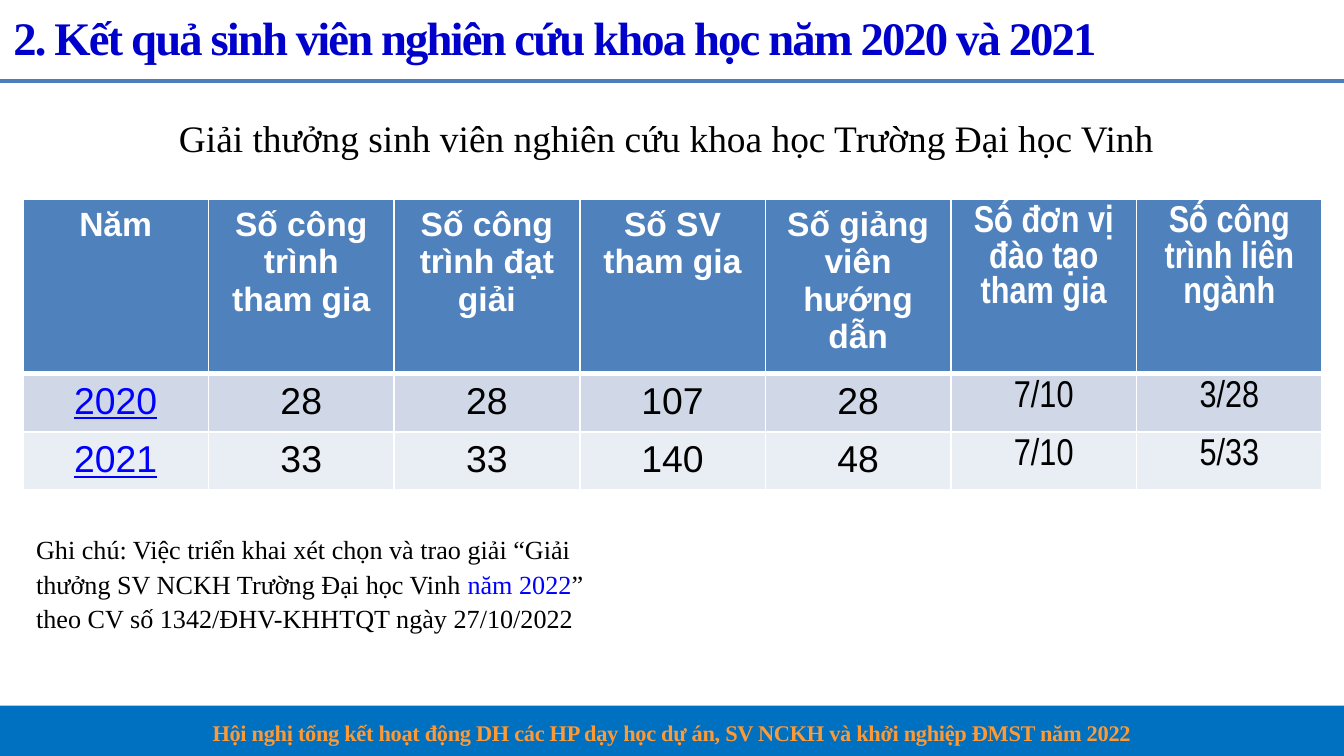
import pptx
import pptx.util
import pptx.dml.color
import pptx.enum.shapes
import pptx.enum.text
from lxml import etree
from pptx.oxml.ns import qn

Inches, Pt = pptx.util.Inches, pptx.util.Pt
ALIGN = pptx.enum.text.PP_ALIGN
MID = pptx.enum.text.MSO_ANCHOR.MIDDLE
HUES = {
    "white": "FFFFFF", "black": "000000", "blue": "0000FF", "navy": "0000CC",
    "bar": "0070C0", "rule": "4B7EBC", "gold": "FF9933",
    "head": "4F81BD", "odd": "D0D8E8", "even": "E9EDF4",
}


def rgb(name):
    return pptx.dml.color.RGBColor.from_string(HUES[name])


def add_run(para, text, size, hue, face="Times New Roman", bold=False, gap=0):
    """Add one styled run; gap is letter spacing in points."""
    run = para.add_run()
    run.text = text
    font = run.font
    font.size, font.name, font.bold = Pt(size), face, bold
    font.color.rgb = rgb(hue)
    if gap:
        font._element.set("spc", str(round(gap * 100)))
    return run


deck = pptx.Presentation()
deck.slide_width, deck.slide_height = Inches(10), Inches(10 * 9 / 16)
slide = deck.slides.add_slide(deck.slide_layouts[5])
shapes = slide.shapes

# Footer bar and rule under the title
bar = shapes.add_shape(pptx.enum.shapes.MSO_SHAPE.RECTANGLE,
                       0, Inches(5.25), Inches(10), Inches(0.37))
bar.height = deck.slide_height - bar.top
bar.shadow.inherit = False
bar.fill.solid()
bar.fill.fore_color.rgb = rgb("bar")
bar.line.fill.background()

rule = shapes.add_connector(pptx.enum.shapes.MSO_CONNECTOR.STRAIGHT,
                            0, Inches(0.6), Inches(10), Inches(0.6))
rule.line.color.rgb = rgb("rule")
rule.line.width = Pt(2)
etree.SubElement(rule._element.spPr, qn("a:effectLst"))

# Title
title = shapes.title
title.left, title.top = Inches(0), Inches(0.02)
title.width, title.height = Inches(10), Inches(0.51)
frame = title.text_frame
frame.auto_size = pptx.enum.text.MSO_AUTO_SIZE.NONE
frame.vertical_anchor = MID
para = frame.paragraphs[0]
para.alignment = ALIGN.LEFT
add_run(para, "2. Kết quả sinh viên nghiên cứu khoa học năm 2020 và 2021",
        25, "navy", bold=True, gap=-1)

# Text boxes: place, anchored in the middle or not, paragraph format, runs
notes = [
    ((0, 5.27, 10, 0.32), False,
     {"alignment": ALIGN.CENTER, "line_spacing": 1.15, "space_after": Pt(10)},
     [("Hội nghị tổng kết hoạt động DH các HP dạy học dự án, "
       "SV NCKH và khởi nghiệp ĐMST năm 2022",
       12, "gold", "Times New Roman", True, -0.17)]),
    ((0.17, 3.9, 4.58, 1.33), False,
     {"line_spacing": 1.1, "space_before": Pt(6)},
     [("Ghi chú: Việc triển khai xét chọn và trao giải “Giải thưởng "
       "SV NCKH Trường Đại học Vinh ", 14, "black"),
      ("năm 2022", 14, "blue"),
      ("” theo CV số 1342/ĐHV-KHHTQT ngày 27/10/2022", 14, "black")]),
    ((0.75, 0.73, 8.42, 0.58), True, {"alignment": ALIGN.CENTER},
     [("Giải thưởng sinh viên nghiên cứu khoa học Trường Đại học Vinh",
       20, "black")]),
]
for place, mid, form, runs in notes:
    frame = shapes.add_textbox(*map(Inches, place)).text_frame
    frame.word_wrap = True
    if mid:
        frame.vertical_anchor = MID
    para = frame.paragraphs[0]
    for key, val in form.items():
        setattr(para, key, val)
    for run in runs:
        add_run(para, *run)

# Table of results; the head row grows to fit its words
rows = [
    ["Năm", "Số công trình tham gia", "Số công trình đạt giải",
     "Số SV tham gia", "Số giảng viên hướng dẫn",
     "Số đơn vị đào tạo tham gia", "Số công trình liên ngành"],
    ["2020", "28", "28", "107", "28", "7/10", "3/28"],
    ["2021", "33", "33", "140", "48", "7/10", "5/33"],
]
fills = ["head", "odd", "even"]
count = len(rows[0])
grid = shapes.add_table(len(rows), count, Inches(0.17), Inches(1.48),
                        Inches(9.67), Inches(2.3))
table = grid.table
for col in table.columns:
    col.width = Inches(9.67 / count)
for r, row in enumerate(rows):
    table.rows[r].height = Inches(0.41)
    for c, text in enumerate(row):
        cell = table.cell(r, c)
        head, slim = r == 0, c >= 5
        para = cell.text_frame.paragraphs[0]
        para.alignment = ALIGN.CENTER
        year = c == 0 and not head
        hue = "white" if head else "blue" if year else "black"
        run = add_run(para, text, 18 if head and not slim else 20, hue,
                      "Arial Narrow" if slim else "Arial", head)
        run.font.underline = year
        props = cell._tc.get_or_add_tcPr()
        for side in "LRTB":
            thick = (head and side == "B") or (r == 1 and side == "T")
            edge = etree.SubElement(props, qn("a:ln" + side),
                                    w=str(Pt(3 if thick else 1)))
            fill = etree.SubElement(edge, qn("a:solidFill"))
            etree.SubElement(fill, qn("a:srgbClr"), val=HUES["white"])
        cell.fill.solid()
        cell.fill.fore_color.rgb = rgb(fills[r])
grid.height = Inches(2.3)

deck.save("out.pptx")
